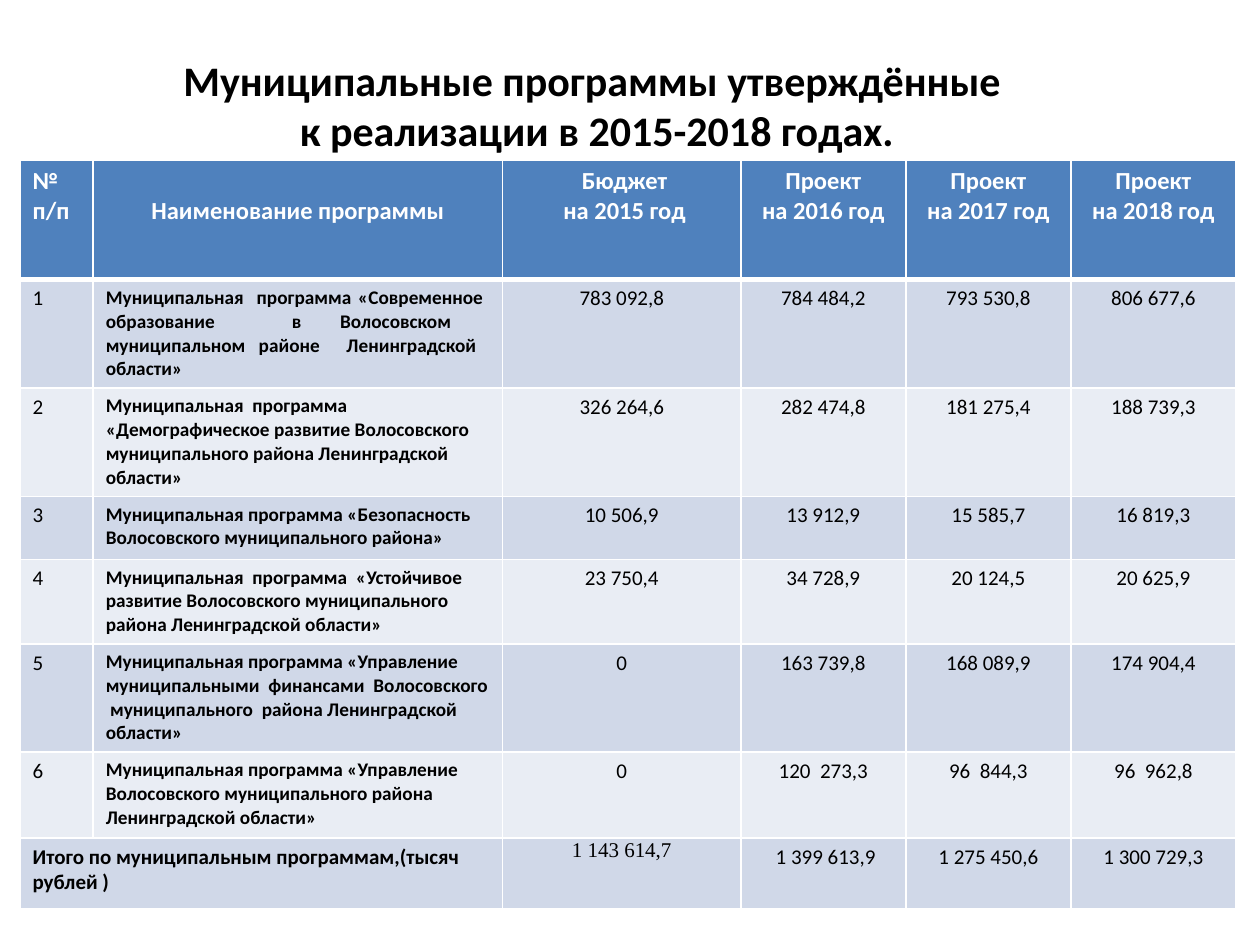
from dataclasses import dataclass

from lxml import etree
from pptx import Presentation
from pptx.dml.color import RGBColor
from pptx.enum.text import MSO_ANCHOR, PP_ALIGN
from pptx.oxml.ns import qn
from pptx.util import Inches, Pt

LEFT, CENTER, JUSTIFY = PP_ALIGN.LEFT, PP_ALIGN.CENTER, PP_ALIGN.JUSTIFY
MIDDLE = MSO_ANCHOR.MIDDLE

BLACK = RGBColor(0x00, 0x00, 0x00)
WHITE = RGBColor(0xFF, 0xFF, 0xFF)
HEADER_BLUE = RGBColor(0x4F, 0x81, 0xBD)
BANDS = (RGBColor(0xD0, 0xD8, 0xE8), RGBColor(0xE9, 0xED, 0xF4))

COLUMN_WIDTHS = (0.58, 3.25, 1.89, 1.31, 1.31, 1.31)
ROW_HEIGHTS = (0.95, 0.86, 0.86, 0.5, 0.67, 0.86, 0.68, 0.56)


@dataclass(frozen=True)
class TextStyle:
    size: float
    bold: bool = False
    align: PP_ALIGN = LEFT
    color: RGBColor = BLACK
    font: str = "Calibri"


@dataclass(frozen=True)
class Program:
    name: str
    amounts: tuple[str, ...]
    align: PP_ALIGN = LEFT


TITLE = TextStyle(24, True, CENTER)
HEADER_LEFT = TextStyle(14, True, LEFT, WHITE)
HEADER = TextStyle(14, True, CENTER, WHITE)
NUMBER = TextStyle(12)
AMOUNT = TextStyle(12, align=CENTER)
TOTAL_LABEL = TextStyle(12, True)
TOTAL_2015 = TextStyle(12, align=CENTER, font="Times New Roman")

HEADINGS = (
    ("№", "п/п"),
    ("Наименование программы",),
    (" Бюджет", " на 2015 год"),
    *((" Проект ", f"на {year} год") for year in (2016, 2017, 2018)),
)
PROGRAMS = (
    Program("Муниципальная  программа «Современное  образование  в Волосовском  "
            "муниципальном районе  Ленинградской  области»",
            ("783 092,8", "784 484,2", "793 530,8", "806 677,6"), JUSTIFY),
    Program("Муниципальная  программа «Демографическое развитие Волосовского "
            "муниципального района Ленинградской области»",
            ("326 264,6", "282 474,8", "181 275,4", "188 739,3")),
    Program("Муниципальная программа «Безопасность Волосовского муниципального района»",
            ("10 506,9", "13 912,9", "15 585,7", "16 819,3")),
    Program("Муниципальная  программа  «Устойчивое развитие Волосовского "
            "муниципального района Ленинградской области»",
            ("23 750,4", "34 728,9", "20 124,5", "20 625,9")),
    Program("Муниципальная программа «Управление муниципальными  финансами  "
            "Волосовского  муниципального  района Ленинградской области»",
            ("0", "163 739,8", "168 089,9", "174 904,4")),
    Program("Муниципальная программа «Управление Волосовского муниципального "
            "района  Ленинградской области»",
            ("0", "120  273,3", "96  844,3", "96  962,8")),
)
TOTAL_TEXT = "Итого по муниципальным программам,(тысяч рублей )"
TOTALS = ("1 143 614,7", " 1 399 613,9", "1 275 450,6", "1 300 729,3")


def add_span(para, text: str, style: TextStyle) -> None:
    span = para.add_run()
    span.text = text
    span.font.size = Pt(style.size)
    span.font.bold = style.bold
    span.font.name = style.font
    span.font.color.rgb = style.color


def write_cell(cell, lines: tuple[str, ...], style: TextStyle) -> None:
    frame = cell.text_frame
    for index, line in enumerate(lines):
        para = frame.add_paragraph() if index else frame.paragraphs[0]
        para.alignment = style.align
        add_span(para, line, style)


def add_borders(cell, top: float, bottom: float) -> None:
    """Draw white borders; top and bottom widths are in points."""
    properties = cell._tc.get_or_add_tcPr()
    for side, width in (("L", 1), ("R", 1), ("T", top), ("B", bottom)):
        line = etree.SubElement(properties, qn(f"a:ln{side}"), w=str(Pt(width)))
        fill = etree.SubElement(line, qn("a:solidFill"))
        etree.SubElement(fill, qn("a:srgbClr"), val=str(WHITE))


def add_title(page) -> None:
    box = page.shapes.add_textbox(Inches(0.2), Inches(0.29), Inches(9), Inches(1.08))
    frame = box.text_frame
    frame.word_wrap = True
    frame.vertical_anchor = MIDDLE
    para = frame.paragraphs[0]
    para.alignment = TITLE.align
    add_span(para, "Муниципальные программы утверждённые", TITLE)
    para.add_line_break()
    add_span(para, " к реализации в 2015-2018 годах.", TITLE)


def add_grid(page):
    """Add the empty table with its sizes, borders and fills."""
    table = page.shapes.add_table(
        len(ROW_HEIGHTS), len(COLUMN_WIDTHS), Inches(0.16), Inches(1.27),
        Inches(sum(COLUMN_WIDTHS)), Inches(sum(ROW_HEIGHTS))).table
    table.first_row = False
    table.horz_banding = False
    for column, width in zip(table.columns, COLUMN_WIDTHS):
        column.width = Inches(width)
    for index, (row, height) in enumerate(zip(table.rows, ROW_HEIGHTS)):
        row.height = Inches(height)
        for cell in row.cells:
            add_borders(cell, 3 if index == 1 else 1, 3 if index == 0 else 1)
            cell.fill.solid()
            cell.fill.fore_color.rgb = BANDS[(index - 1) % 2] if index else HEADER_BLUE
    return table


def fill_table(table) -> None:
    for column, lines in enumerate(HEADINGS):
        write_cell(table.cell(0, column), lines, HEADER if column else HEADER_LEFT)
    table.cell(0, 1).margin_top = Inches(0.29)

    for row, program in enumerate(PROGRAMS, start=1):
        write_cell(table.cell(row, 0), (str(row),), NUMBER)
        write_cell(table.cell(row, 1), (program.name,), TextStyle(11, True, program.align))
        for column, amount in enumerate(program.amounts, start=2):
            write_cell(table.cell(row, column), (amount,), AMOUNT)

    last = len(ROW_HEIGHTS) - 1
    table.cell(last, 0).merge(table.cell(last, 1))
    write_cell(table.cell(last, 0), (TOTAL_TEXT,), TOTAL_LABEL)
    for column, total in enumerate(TOTALS, start=2):
        write_cell(table.cell(last, column), (total,), TOTAL_2015 if column == 2 else AMOUNT)
    first_total = table.cell(last, 2)
    first_total.margin_left = first_total.margin_right = Inches(0.01)
    first_total.margin_top = Inches(0.01)
    first_total.margin_bottom = 0


def main() -> None:
    deck = Presentation()
    deck.slide_width, deck.slide_height = Inches(10), Inches(7.5)
    page = deck.slides.add_slide(deck.slide_layouts[6])
    add_title(page)
    fill_table(add_grid(page))
    deck.save("out.pptx")


if __name__ == "__main__":
    main()
